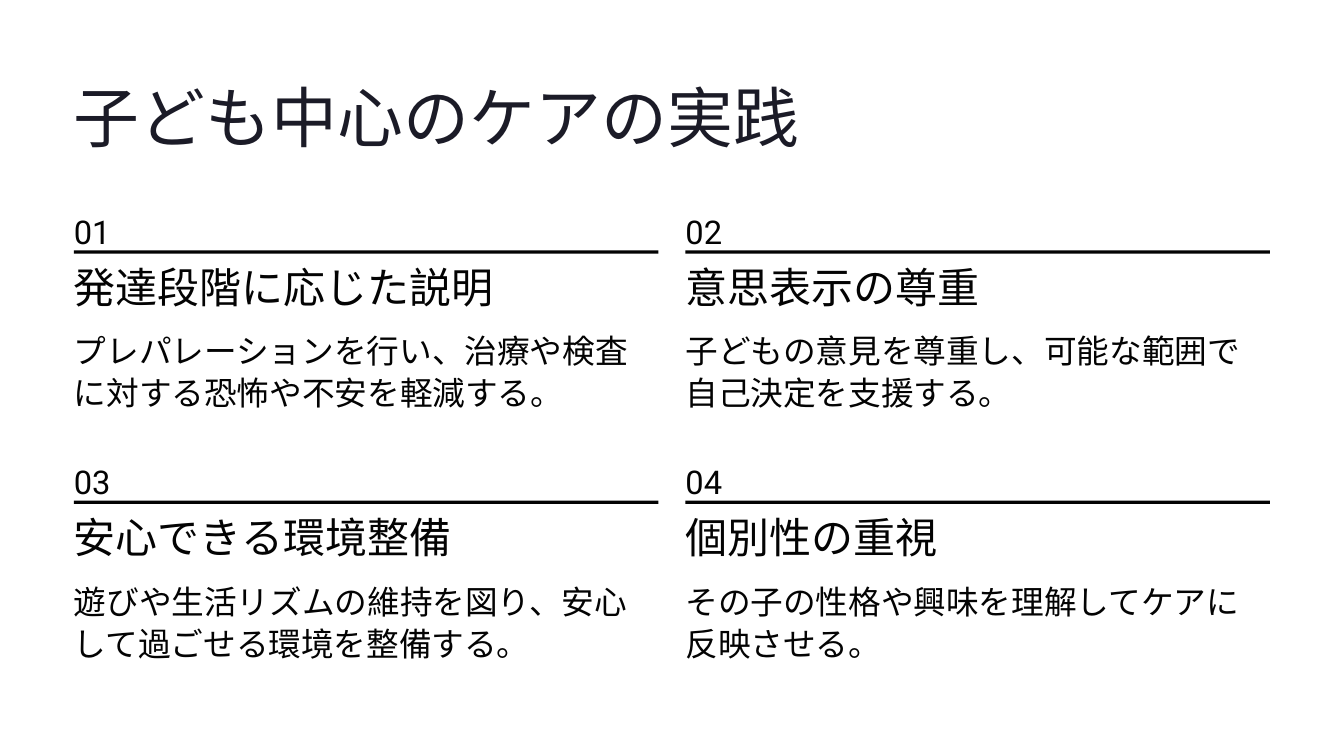
from dataclasses import dataclass

from pptx import Presentation
from pptx.dml.color import RGBColor
from pptx.enum.shapes import MSO_SHAPE
from pptx.enum.text import MSO_ANCHOR, MSO_AUTO_SIZE, PP_ALIGN
from pptx.util import Emu, Pt

RECT = MSO_SHAPE.RECTANGLE
TOP = MSO_ANCHOR.TOP
LEFT = PP_ALIGN.LEFT
NO_FIT = MSO_AUTO_SIZE.NONE

EMU_PER_PX = 9144
SLIDE_W, SLIDE_H = 1600, 900
MARGIN_X, GRID_Y = 88, 249
CARD_W, GAP_X, PITCH_Y = 696, 32, 298
COLUMNS = 2
TITLE_COLOR, INK = "1B1B27", "030303"


@dataclass
class Card:
    heading: str
    detail: str


CARDS = [
    Card("発達段階に応じた説明", "プレパレーションを行い、治療や検査に対する恐怖や不安を軽減する。"),
    Card("意思表示の尊重", "子どもの意見を尊重し、可能な範囲で自己決定を支援する。"),
    Card("安心できる環境整備", "遊びや生活リズムの維持を図り、安心して過ごせる環境を整備する。"),
    Card("個別性の重視", "その子の性格や興味を理解してケアに反映させる。"),
]


def px(n: int) -> Emu:
    return Emu(n * EMU_PER_PX)


def rgb(value: str) -> RGBColor:
    return RGBColor.from_string(value)


def write(sp, text: str, *, font: str, size: float, spacing: float,
          color: str = INK, wrap: bool = False) -> None:
    tf = sp.text_frame
    tf.margin_left = tf.margin_top = tf.margin_right = tf.margin_bottom = 0
    tf.auto_size = NO_FIT
    tf.word_wrap = wrap
    tf.vertical_anchor = TOP
    p = tf.paragraphs[0]
    p.alignment = LEFT
    p.line_spacing = Pt(spacing)
    p.space_before = Pt(0)
    r = p.add_run()
    r.text = text
    r.font.name = font
    r.font.size = Pt(size)
    r.font.color.rgb = rgb(color)


def add_text(s, x: int, y: int, w: int, h: int, text: str, **fmt) -> None:
    write(s.shapes.add_textbox(px(x), px(y), px(w), px(h)), text, **fmt)


def add_rule(s, x: int, y: int) -> None:
    sp = s.shapes.add_shape(RECT, px(x), px(y), px(CARD_W), px(4))
    sp.shadow.inherit = False
    sp.fill.solid()
    sp.fill.fore_color.rgb = rgb(INK)
    sp.line.fill.background()


def add_card(s, index: int, card: Card) -> None:
    row, col = divmod(index, COLUMNS)
    x = MARGIN_X + col * (CARD_W + GAP_X)
    y = GRID_Y + row * PITCH_Y
    add_text(s, x, y, 32, 39, f"{index + 1:02d}", font="Roboto", size=28, spacing=36)
    add_rule(s, x, y + 49)
    add_text(s, x, y + 73, 395, 49, card.heading, font="Inter", size=36, spacing=35.5)
    add_text(s, x, y + 142, CARD_W, 101, card.detail,
             font="Lato", size=28, spacing=36, wrap=True)


def main() -> None:
    prs = Presentation()
    prs.slide_width, prs.slide_height = px(SLIDE_W), px(SLIDE_H)
    s = prs.slides.add_slide(prs.slide_layouts[5])
    title = s.shapes.title
    title.left, title.top = px(MARGIN_X), px(87)
    title.width, title.height = px(868), px(99)
    write(title, "子ども中心のケアの実践", font="Inter", size=56.5, spacing=71,
          color=TITLE_COLOR)
    for index, card in enumerate(CARDS):
        add_card(s, index, card)
    prs.save("out.pptx")


if __name__ == "__main__":
    main()
